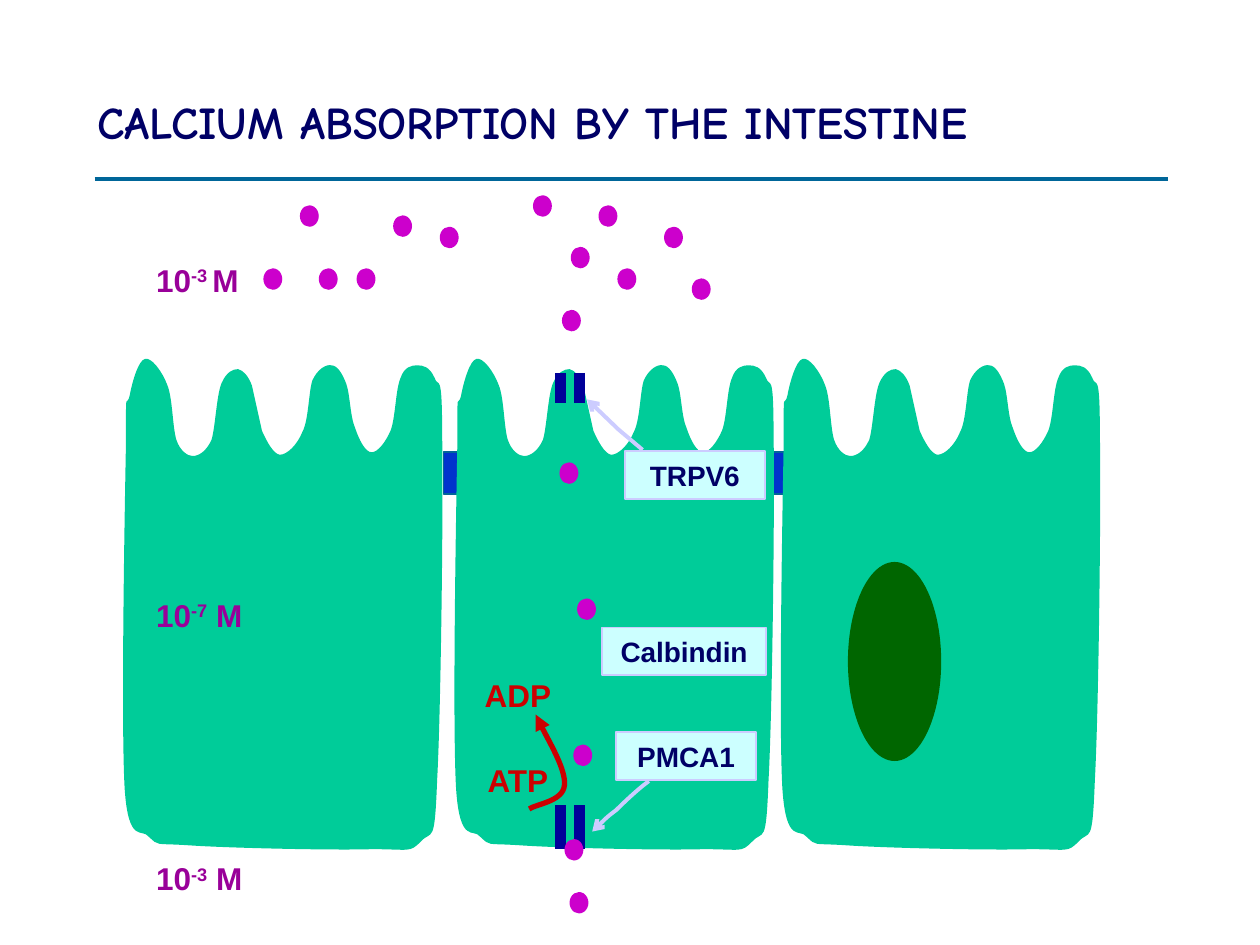
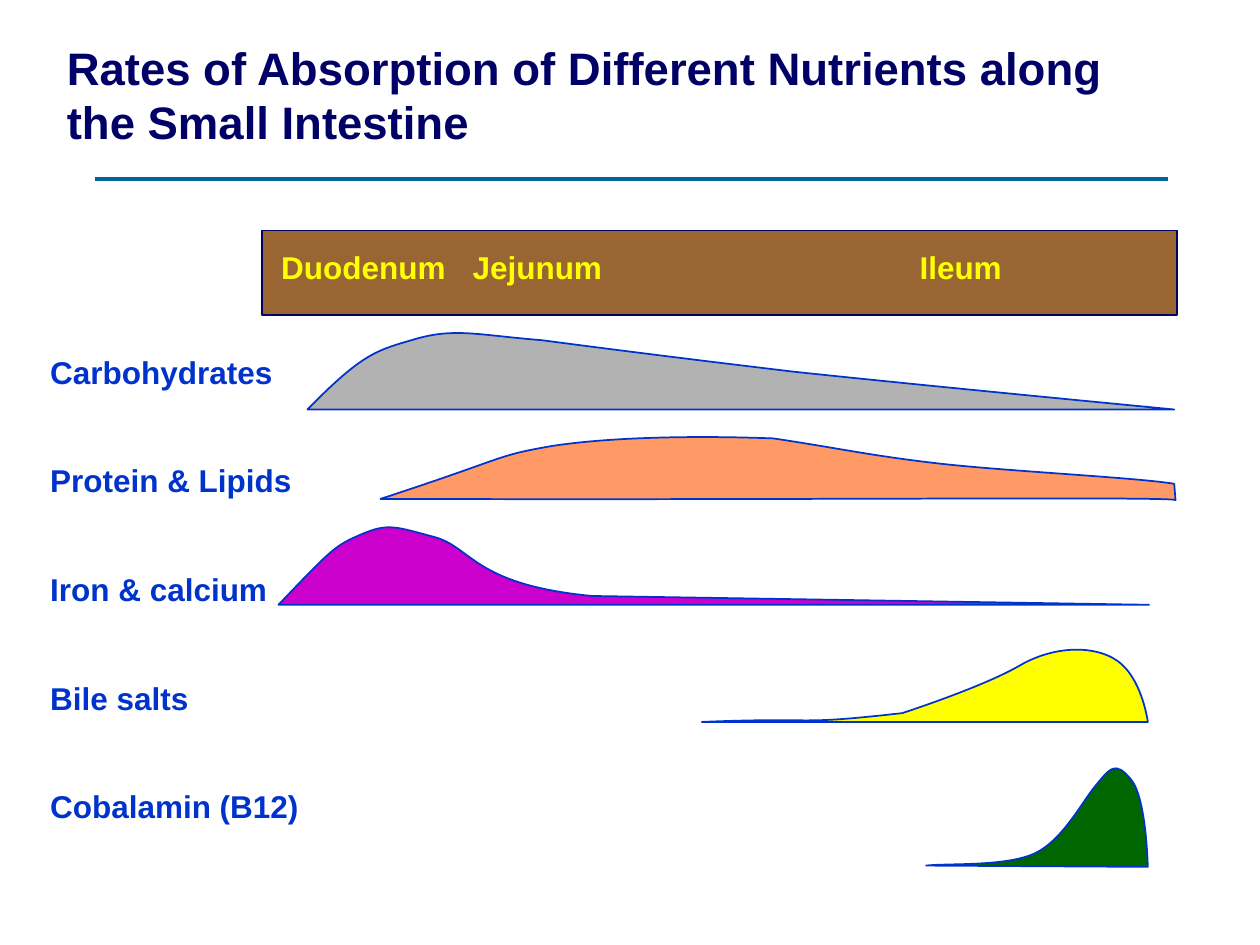
from lxml import etree
from pptx import Presentation
from pptx.dml.color import RGBColor
from pptx.enum.shapes import MSO_CONNECTOR, MSO_SHAPE
from pptx.enum.text import MSO_ANCHOR, MSO_AUTO_SIZE, PP_ALIGN
from pptx.oxml.ns import qn
from pptx.util import Inches, Pt

RECT, OVAL = MSO_SHAPE.RECTANGLE, MSO_SHAPE.OVAL
STRAIGHT = MSO_CONNECTOR.STRAIGHT
MIDDLE, NO_FIT = MSO_ANCHOR.MIDDLE, MSO_AUTO_SIZE.NONE
LEFT, CENTER = PP_ALIGN.LEFT, PP_ALIGN.CENTER

SANS, COMIC = "Arial", "Comic Neue"
NAVY, DEEP_BLUE, BLUE, TEAL = "000066", "000099", "0033CC", "006699"
CELL_GREEN, DARK_GREEN = "00CC99", "006600"
MAGENTA, PURPLE, RED = "CC00CC", "990099", "CC0000"
PALE_CYAN, LILAC = "CCFFFF", "CCCCFF"
BROWN, YELLOW, GREY, ORANGE = "996633", "FFFF00", "B2B2B2", "FF9966"

CELL_OUTLINE = [
    (.07, .31), (.09, .2, .14, .03, .19, .02), (.24, 0, .33, .12, .37, .23),
    (.41, .33, .41, .56, .44, .66), (.47, .75, .53, .79, .57, .79),
    (.62, .79, .68, .75, .72, .66), (.75, .56, .76, .3, .8, .21),
    (.84, .12, .89, .1, .93, .1), (.97, .11, 1.01, .15, 1.04, .23),
    (1.12, .59), (1.16, .68, 1.21, .77, 1.26, .78),
    (1.32, .78, 1.4, .7, 1.44, .6), (1.49, .51, 1.49, .28, 1.52, .19),
    (1.56, .1, 1.63, .06, 1.67, .07), (1.72, .07, 1.76, .14, 1.79, .22),
    (1.82, .31, 1.82, .48, 1.86, .57), (1.89, .66, 1.94, .76, 1.99, .76),
    (2.04, .76, 2.1, .68, 2.14, .59), (2.18, .49, 2.18, .26, 2.22, .17),
    (2.25, .08, 2.31, .07, 2.35, .07), (2.4, .07, 2.45, .08, 2.49, .17),
    (2.52, .26, 2.55, .09, 2.55, .62), (2.56, 1.15, 2.54, 2.83, 2.51, 3.36),
    (2.49, 3.9, 2.47, 3.75, 2.38, 3.85), (2.29, 3.94, 2.3, 3.91, 1.99, 3.91),
    (1.69, 3.92, .84, 3.9, .55, 3.88), (.25, 3.86, .31, 3.89, .22, 3.81),
    (.17, 3.74, .06, 3.88, .03, 3.43), (0, 2.91, .03, 1.23, .04, .71),
    (.04, .19, .04, .43, .07, .31)]

LUMEN_IONS = [
    (2.38, 1.63), (2.53, 2.13), (2.09, 2.13), (2.83, 2.13), (3.12, 1.71),
    (3.49, 1.8), (4.53, 1.96), (4.23, 1.55), (4.75, 1.63), (4.9, 2.13),
    (5.49, 2.21), (5.27, 1.8), (4.46, 2.46)]
TRANSIT_IONS = [(4.44, 3.67), (4.58, 4.75), (4.55, 5.91), (4.48, 6.66), (4.52, 7.08)]

NUTRIENT_CURVES = [
    (2.44, 2.6, GREY, [
        (6.88, .65), (0, .65), (.44, .2, .55, .18, .86, .09),
        (1.17, 0, 1.36, .06, 1.86, .1), (2.39, .17, 3.02, .25, 3.86, .35),
        (4.7, .44, 6.25, .59, 6.88, .65)]),
    (3.02, 3.46, ORANGE, [
        (6.31, .51), (6.33, .48, 3.44, .51, 0, .5),
        (1.04, .16, .9, .16, 1.36, .08), (1.88, 0, 2.61, 0, 3.12, .02),
        (3.65, .1, 3.91, .16, 4.44, .22), (4.97, .28, 5.99, .33, 6.3, .38)]),
    (2.21, 4.15, MAGENTA, [
        (6.91, .65), (0, .65), (.43, .2, .45, .18, .66, .09),
        (.87, 0, .93, .03, 1.23, .11), (1.54, .19, 1.54, .49, 2.49, .58)]),
    (5.57, 5.11, YELLOW, [
        (0, .62), (3.54, .62), (3.54, .62, 3.5, .31, 3.33, .16),
        (3.16, .01, 2.81, 0, 2.51, .18), (2.21, .35, 1.59, .55, 1.59, .55),
        (.7, .65, .98, .58, 0, .62)]),
    (7.35, 6.03, DARK_GREEN, [
        (0, .84), (1.76, .85), (1.76, .85, 1.75, .31, 1.63, .16),
        (1.5, 0, 1.46, .07, 1.35, .2), (1.24, .33, 1.09, .63, .87, .74),
        (.64, .85, .18, .82, 0, .84)])]
NUTRIENTS = ["Carbohydrates", "Protein & Lipids", "Iron & calcium",
             "Bile salts", "Cobalamin (B12)"]


def rgb(color):
    """Turn a hex string into a colour."""
    return RGBColor.from_string(color)


def paint(sp, fill=None, line=None, width=1):
    """Set the fill and outline of a shape and remove its shadow."""
    sp.shadow.inherit = False
    if fill:
        sp.fill.solid()
        sp.fill.fore_color.rgb = rgb(fill)
    else:
        sp.fill.background()
    if line:
        sp.line.color.rgb = rgb(line)
        sp.line.width = Pt(width)
    else:
        sp.line.fill.background()
    return sp


def add_preset(s, kind, box, fill, line=None):
    """Add a painted preset shape in a box given in inches."""
    return paint(s.shapes.add_shape(kind, *map(Inches, box)), fill, line)


def style(p, size, color, align=LEFT, font=SANS):
    """Format one bold paragraph."""
    p.alignment = align
    p.font.name, p.font.size, p.font.bold = font, Pt(size), True
    p.font.color.rgb = rgb(color)


def add_text(s, box, lines, color, align=LEFT, gap=0):
    """Add a text box with one 18 pt paragraph per line."""
    tf = s.shapes.add_textbox(*map(Inches, box)).text_frame
    tf.word_wrap = True
    for i, line in enumerate(lines):
        p = tf.add_paragraph() if i else tf.paragraphs[0]
        p.add_run().text = line
        style(p, 18, color, align)
        if i:
            p.space_before = Pt(gap)
    return tf


def add_line(s, start, end, color, width):
    """Add a straight line without shadow."""
    c = s.shapes.add_connector(STRAIGHT, *map(Inches, start + end))
    c.line.color.rgb = rgb(color)
    c.line.width = Pt(width)
    etree.SubElement(c.element.spPr, qn("a:effectLst"))
    return c


def add_outline(s, x, y, outline, closed=True):
    """Add a freeform of line ends (two numbers) and cubic curves (six)."""
    points = [(Inches(x + item[k]), Inches(y + item[k + 1]))
              for item in outline for k in range(0, len(item), 2)]
    builder = s.shapes.build_freeform(*points[0])
    builder.add_line_segments(points[1:], close=closed)
    sp = builder.convert_to_shape()
    geometry = sp.element.spPr.find(".//" + qn("a:path"))
    segments = iter(geometry.findall(qn("a:lnTo")))
    for item in outline[1:]:
        segment = next(segments)
        if len(item) == 6:
            segment.tag = qn("a:cubicBezTo")
            for _ in range(2):
                extra = next(segments)
                segment.append(extra[0])
                geometry.remove(extra)
    return sp


def add_arrow(s, x, y, outline, color, width, head):
    """Add an open curve with an arrowhead at its first point."""
    sp = paint(add_outline(s, x, y, outline, closed=False), None, color, width)
    etree.SubElement(sp.element.spPr.find(qn("a:ln")), qn("a:headEnd"), type=head)


def add_title(s, text, box, font):
    """Place and format the title placeholder."""
    title = s.shapes.title
    title.left, title.top, title.width, title.height = map(Inches, box)
    tf = title.text_frame
    tf.text = text
    tf.word_wrap, tf.auto_size, tf.vertical_anchor = True, NO_FIT, MIDDLE
    style(tf.paragraphs[0], 26, NAVY, font=font)


def add_master_rule(prs, s):
    """Put the rule below the titles on the slide master."""
    rule = add_line(s, (.75, 1.42), (9.27, 1.42), TEAL, 2.25).element
    rule.nvCxnSpPr.cNvPr.set("id", "20")
    prs.slide_master.element.cSld.spTree.append(rule)


def add_concentration(s, x, y, exponent, unit):
    """Write a molar concentration with a raised exponent."""
    p = add_text(s, (x, y, 1.19, .4), ["10"], PURPLE).paragraphs[0]
    r = p.add_run()
    r.text = exponent
    r._r.get_or_add_rPr().set("baseline", "30000")
    p.add_run().text = unit


def add_protein(s, x, y, width, name):
    """Add the label box of a transport protein."""
    sp = add_preset(s, RECT, (x, y, width, .38), PALE_CYAN, LILAC)
    tf = sp.text_frame
    tf.text = name
    tf.vertical_anchor = MIDDLE
    style(tf.paragraphs[0], 16, NAVY, CENTER)


def add_channel(s, x, y, height):
    """Draw the two walls of a membrane channel."""
    for wall in (x, x + .15):
        add_line(s, (wall, y), (wall, y + height), DEEP_BLUE, 6)


def add_cells(s, x, y):
    """Draw three epithelial cells, their junctions and a nucleus."""
    for dx in (4.93, 2.56):
        add_preset(s, RECT, (x + dx, y + .76, .44, .33), BLUE, TEAL)
    for dx in (0, 2.63, 5.22):
        paint(add_outline(s, x + dx, y, CELL_OUTLINE), CELL_GREEN)
    add_preset(s, OVAL, (x + 5.77, y + 1.63, .74, 1.58), DARK_GREEN)


def add_atp_cycle(s, x, y):
    """Show ATP turning into ADP."""
    for dy, name in ((.67, "ATP"), (0, "ADP")):
        add_text(s, (x, y + dy, .74, .4), [name], RED, CENTER)
    add_arrow(s, x + .46, y + .35,
              [(.05, 0), (.09, .09, .29, .44, .28, .56), (.27, .69, .06, .71, 0, .75)],
              RED, 3, "triangle")


def build_calcium(s):
    """Build the slide on calcium transport through the cell."""
    add_title(s, "CALCIUM ABSORPTION BY THE INTESTINE", (.67, .5, 8.56, .92), COMIC)
    add_cells(s, .96, 2.83)
    for y, exponent, unit in ((2.02, "-3 ", "M"), (6.77, "-3", " M"), (4.68, "-7", " M")):
        add_concentration(s, 1.14, y, exponent, unit)
    add_channel(s, 4.45, 2.96, .24)
    add_channel(s, 4.45, 6.39, .35)
    for x, y in LUMEN_IONS + TRANSIT_IONS:
        add_preset(s, OVAL, (x, y, .15, .17), MAGENTA)
    add_protein(s, 4.96, 3.58, 1.11, "TRPV6")
    add_protein(s, 4.78, 4.98, 1.3, "Calbindin")
    add_protein(s, 4.89, 5.81, 1.11, "PMCA1")
    add_arrow(s, 4.66, 3.17, [(0, 0), (.25, .24), (.44, .4)], LILAC, 2.25, "arrow")
    add_arrow(s, 4.7, 6.2,
              [(0, .4), (.03, .37, .11, .29, .19, .23), (.26, .16, .39, .04, .45, 0)],
              LILAC, 2.25, "arrow")
    add_atp_cycle(s, 3.74, 5.32)


def add_intestine(s, x, y):
    """Draw the bar that names the parts of the small intestine."""
    add_preset(s, RECT, (x, y, 7.26, .67), BROWN, NAVY)
    for dx, width, part in ((-.01, 1.63, "Duodenum"), (1.48, 1.41, "Jejunum"),
                            (4.73, 1.63, "Ileum")):
        add_text(s, (x + dx, y + .09, width, .4), [part], YELLOW, CENTER)


def build_rates(s):
    """Build the slide on absorption rates along the intestine."""
    add_title(s, "Rates of Absorption of Different Nutrients along the Small Intestine",
              (.43, .21, 8.92, 1.08), SANS)
    add_intestine(s, 2.08, 1.83)
    add_text(s, (.3, 2.75, 2.37, 4.01), NUTRIENTS, BLUE, gap=40.5)
    for x, y, color, outline in NUTRIENT_CURVES:
        paint(add_outline(s, x, y, outline), color, BLUE)


def main():
    """Build both slides and save them."""
    prs = Presentation()
    prs.slide_width, prs.slide_height = Inches(10), Inches(7.5)
    title_only = prs.slide_layouts[5]
    calcium, rates = (prs.slides.add_slide(title_only) for _ in range(2))
    add_master_rule(prs, calcium)
    build_calcium(calcium)
    build_rates(rates)
    prs.save("out.pptx")


if __name__ == "__main__":
    main()
